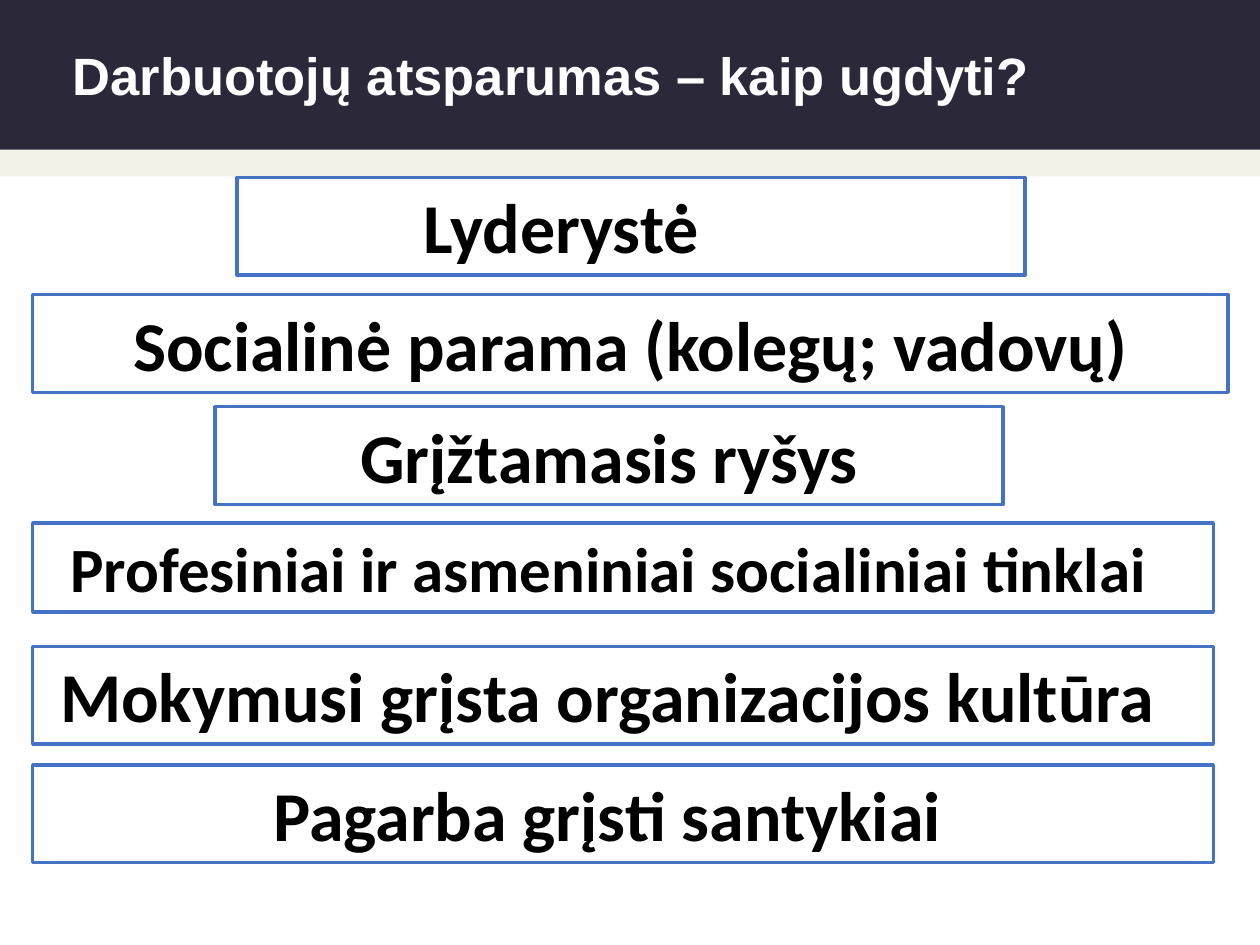
import pptx
import pptx.util
import pptx.dml.color
import pptx.enum.shapes
import pptx.enum.text
from dataclasses import dataclass

Cm, Pt = pptx.util.Cm, pptx.util.Pt
RGB = pptx.dml.color.RGBColor.from_string
ALIGN = pptx.enum.text.PP_ALIGN
FIT = pptx.enum.text.MSO_AUTO_SIZE
ANCHOR = pptx.enum.text.MSO_ANCHOR
RECT = pptx.enum.shapes.MSO_SHAPE.RECTANGLE

TITLE = "Darbuotojų atsparumas – kaip ugdyti?"
FACTORS = [
    dict(text="Lyderystė", box=(4.78, 3.58, 15.88), align=ALIGN.LEFT, left=3.51),
    dict(text="Socialinė parama (kolegų; vadovų)", box=(0.66, 5.94, 24.1)),
    dict(text="Grįžtamasis ryšys", box=(4.34, 8.2, 15.88)),
    dict(text="Profesiniai ir asmeniniai socialiniai tinklai",
         box=(0.66, 10.54, 23.8), size=36, right=0.57),
    dict(text="Mokymusi grįsta organizacijos kultūra", box=(0.66, 13.03, 23.8), right=0.64),
    dict(text="Pagarba grįsti santykiai", box=(0.66, 15.42, 23.8), right=0.64),
]


@dataclass
class Theme:
    dark: str = "2A2839"
    cream: str = "F2F3E6"
    white: str = "FFFFFF"
    black: str = "000000"
    border: str = "4472C4"
    title_font: str = "Arial"
    body_font: str = "Calibri"
    title_size: int = 30
    body_size: int = 40


T = Theme()


def add_rect(s, x, y, w, h, fill=None, line=None):
    sp = s.shapes.add_shape(RECT, Cm(x), Cm(y), Cm(w), Cm(h))
    sp.shadow.inherit = False
    if fill:
        sp.fill.solid()
        sp.fill.fore_color.rgb = RGB(fill)
    else:
        sp.fill.background()
    if line:
        sp.line.color.rgb = RGB(line)
        sp.line.width = Pt(2)
    else:
        sp.line.fill.background()
    return sp


def put_text(sp, text, *, font, size, color, align=ALIGN.LEFT, insets=(0, 0, 0, 0),
             spacing=None, fit=FIT.NONE):
    tf = sp.text_frame
    tf.word_wrap = True
    tf.auto_size = fit
    tf.vertical_anchor = ANCHOR.TOP
    tf.margin_left, tf.margin_top, tf.margin_right, tf.margin_bottom = map(Cm, insets)
    p = tf.paragraphs[0]
    p.alignment = align
    if spacing:
        p.line_spacing = Pt(spacing)
    r = p.add_run()
    r.text = text
    r.font.name = font
    r.font.size = Pt(size)
    r.font.bold = True
    r.font.color.rgb = RGB(color)


def add_factor(s, text, box, size=T.body_size, align=ALIGN.CENTER, left=0, right=0):
    x, y, w = box
    h = round(size * 1.22 * 2.54 / 72 + 0.25, 2)
    sp = add_rect(s, x, y, w, h, line=T.border)
    put_text(sp, text, font=T.body_font, size=size, color=T.black, align=align,
             insets=(0.25 + left, 0.13, 0.25 + right, 0.13), fit=FIT.SHAPE_TO_FIT_TEXT)


def main():
    prs = pptx.Presentation()
    prs.slide_width, prs.slide_height = Cm(25.4), Cm(19.05)
    s = prs.slides.add_slide(prs.slide_layouts[6])
    for height, color in ((3.56, T.cream), (3.02, T.dark)):
        add_rect(s, 0, 0, 25.4, height, fill=color)
    title = s.shapes.add_textbox(Cm(1.47), Cm(0.97), Cm(20.02), Cm(1.27))
    put_text(title, TITLE, font=T.title_font, size=T.title_size, color=T.white, spacing=33)
    for factor in FACTORS:
        add_factor(s, **factor)
    prs.save("out.pptx")


if __name__ == "__main__":
    main()
